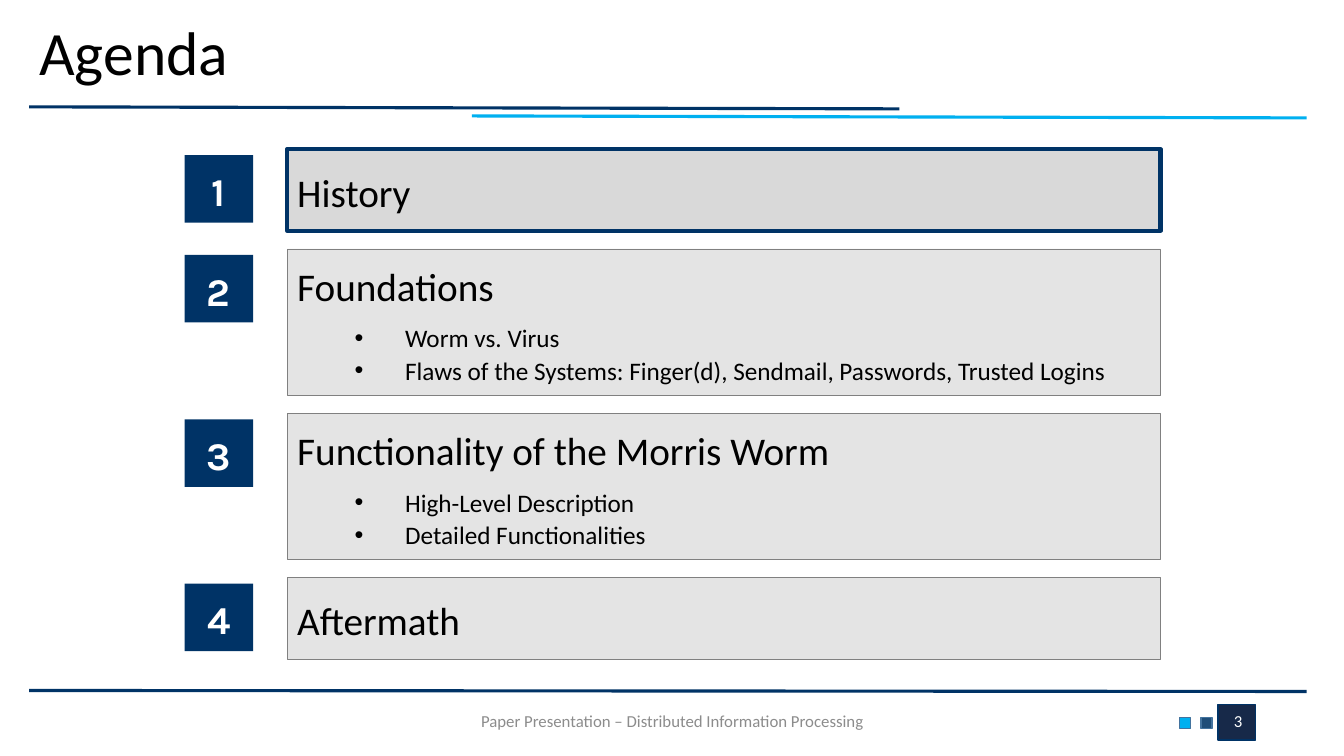
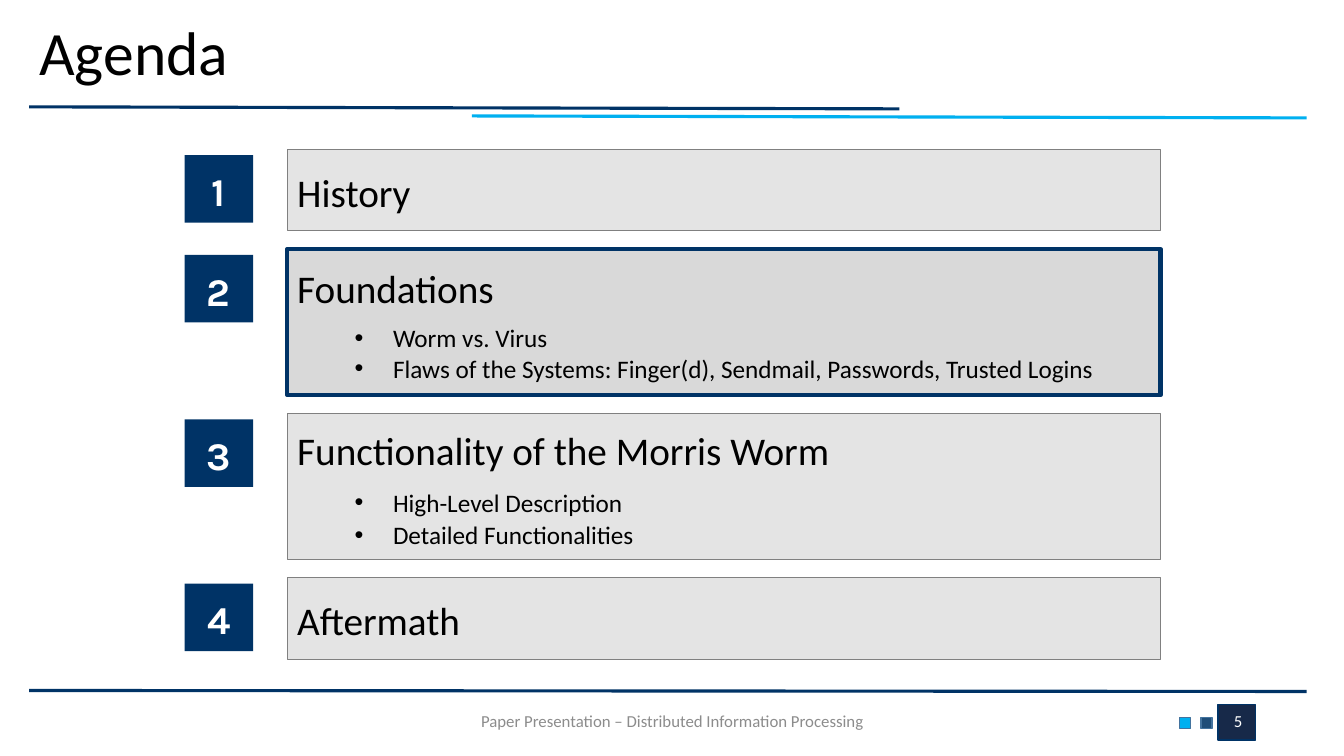
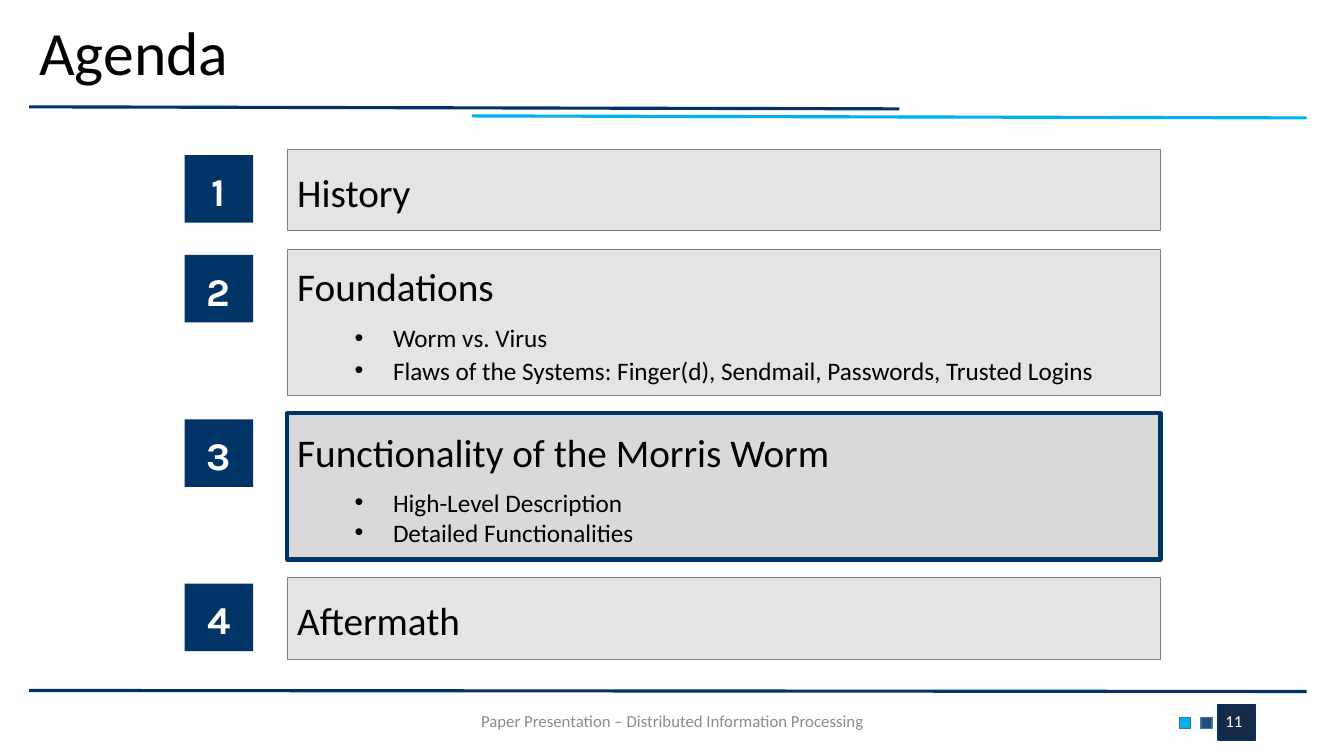
"""Build three agenda slides, each with a different section highlighted."""
from dataclasses import dataclass

from lxml.etree import SubElement
from pptx import Presentation
from pptx.dml.color import RGBColor
from pptx.enum.shapes import MSO_CONNECTOR, MSO_SHAPE
from pptx.enum.text import MSO_ANCHOR, MSO_AUTO_SIZE, PP_ALIGN
from pptx.oxml.ns import qn
from pptx.shapes.autoshape import Shape
from pptx.slide import Slide
from pptx.text.text import TextFrame
from pptx.util import Inches, Pt

NAVY = RGBColor(0x00, 0x33, 0x66)
DARK_NAVY = RGBColor(0x17, 0x29, 0x49)
STEEL = RGBColor(0x1F, 0x4E, 0x79)
STEEL_EDGE = RGBColor(0x43, 0x73, 0x9E)
CYAN = RGBColor(0x00, 0xB0, 0xF0)
PANEL_GRAY = RGBColor(0xD9, 0xD9, 0xD9)
EDGE_GRAY = RGBColor(0x80, 0x80, 0x80)
FOOTER_GRAY = RGBColor(0x8C, 0x8C, 0x8C)
BLACK = RGBColor(0x00, 0x00, 0x00)
WHITE = RGBColor(0xFF, 0xFF, 0xFF)

TITLE_ONLY = 5
LINE_SPACING = 1.07
SECTION_TOP = 1.48
SECTION_GAP = 0.18
PLAIN_HEIGHT = 0.81
DETAILED_HEIGHT = 1.45
BULLET_LEFT = 0.57
FOOTER = "Paper Presentation – Distributed Information Processing"


@dataclass(frozen=True)
class Rule:
    """A coloured line that spans part of the slide."""

    start: tuple[float, float]
    end: tuple[float, float]
    color: RGBColor


@dataclass(frozen=True)
class Block:
    """A filled rectangle beside the page number."""

    box: tuple[float, float, float, float]
    fill: RGBColor
    edge: RGBColor


@dataclass(frozen=True)
class Section:
    """An agenda entry with optional subtopics."""

    heading: str
    topics: tuple[str, ...] = ()


@dataclass(frozen=True)
class AgendaPage:
    """The page number, highlighted section and bullet gap of one slide."""

    number: int
    current: int
    bullet_gap: float


RULES = (
    Rule((0.29, 1.06), (8.92, 1.08), NAVY),
    Rule((0.29, 6.85), (12.96, 6.86), NAVY),
    Rule((4.68, 1.15), (12.96, 1.17), CYAN),
)
BLOCKS = (
    Block((12.08, 6.99, 0.37, 0.35), DARK_NAVY, NAVY),
    Block((11.91, 7.12, 0.11, 0.11), STEEL, STEEL_EDGE),
    Block((11.7, 7.12, 0.11, 0.11), CYAN, STEEL_EDGE),
)
SECTIONS = (
    Section("History"),
    Section("Foundations", (
        "Worm vs. Virus",
        "Flaws of the Systems: Finger(d), Sendmail, Passwords, Trusted Logins",
    )),
    Section("Functionality of the Morris Worm", (
        "High-Level Description",
        "Detailed Functionalities",
    )),
    Section("Aftermath"),
)
PAGES = (AgendaPage(3, 1, 0.5), AgendaPage(5, 2, 0.38), AgendaPage(11, 3, 0.38))


def write_text(
    text_frame: TextFrame,
    text: str,
    *,
    size: float,
    color: RGBColor = BLACK,
    font: str = "Calibri",
    bold: bool = False,
    align: PP_ALIGN = PP_ALIGN.LEFT,
    line_spacing: float = 1.0,
    space_after: float = 0,
    bullet_gap: float = 0,
) -> None:
    """Append a formatted paragraph, bulleted when a bullet gap is given."""
    text_frame.word_wrap = True
    text_frame.auto_size = MSO_AUTO_SIZE.NONE
    text_frame.vertical_anchor = MSO_ANCHOR.MIDDLE
    paragraph = text_frame.paragraphs[0]
    if paragraph.text:
        paragraph = text_frame.add_paragraph()
    paragraph.text = text
    paragraph.alignment = align
    paragraph.line_spacing = line_spacing
    paragraph.space_before = Pt(0)
    paragraph.space_after = Pt(space_after)
    if bullet_gap:
        paragraph.level = 1
        properties = paragraph._p.get_or_add_pPr()
        properties.set("marL", str(Inches(BULLET_LEFT + bullet_gap)))
        properties.set("indent", str(-Inches(bullet_gap)))
        SubElement(properties, qn("a:buFont"), typeface="Arial")
        SubElement(properties, qn("a:buChar"), char="•")
    run_font = paragraph.runs[0].font
    run_font.name = font
    run_font.size = Pt(size)
    run_font.bold = bold
    run_font.color.rgb = color


def add_rectangle(
    slide: Slide,
    box: tuple[float, float, float, float],
    fill: RGBColor,
    edge: RGBColor | None = None,
    edge_width: float = 1,
    opacity: int = 100,
) -> Shape:
    """Add a flat rectangle with an optional edge and transparency."""
    shape = slide.shapes.add_shape(MSO_SHAPE.RECTANGLE, *map(Inches, box))
    shape.shadow.inherit = False
    shape.fill.solid()
    shape.fill.fore_color.rgb = fill
    if opacity < 100:
        fill_color = shape._element.spPr.find(qn("a:solidFill"))[0]
        SubElement(fill_color, qn("a:alpha"), val=str(opacity * 1000))
    if edge is None:
        shape.line.fill.background()
    else:
        shape.line.color.rgb = edge
        shape.line.width = Pt(edge_width)
    return shape


def add_rule(slide: Slide, rule: Rule) -> None:
    """Add one of the lines that frame the content."""
    connector = slide.shapes.add_connector(
        MSO_CONNECTOR.STRAIGHT, *map(Inches, rule.start + rule.end)
    )
    connector.line.color.rgb = rule.color
    connector.line.width = Pt(2.25)
    SubElement(connector._element.spPr, qn("a:effectLst"))


def add_frame(slide: Slide, title: str, number: int) -> None:
    """Add the title, lines, footer and page number shared by all slides."""
    for rule in RULES:
        add_rule(slide, rule)
    for block in BLOCKS:
        add_rectangle(slide, block.box, block.fill, block.edge)
    heading = slide.shapes.title
    heading.left, heading.top = Inches(0.29), Inches(0.09)
    heading.width, heading.height = Inches(12.67), Inches(0.93)
    write_text(heading.text_frame, title, size=44, line_spacing=0.9)
    for left, width, text, color, align in (
        (9.42, 3, str(number), WHITE, PP_ALIGN.RIGHT),
        (4.42, 4.5, FOOTER, FOOTER_GRAY, PP_ALIGN.CENTER),
    ):
        text_box = slide.shapes.add_textbox(
            Inches(left), Inches(6.95), Inches(width), Inches(0.4)
        )
        write_text(text_box.text_frame, text, size=12, color=color, align=align)


def add_section(
    slide: Slide,
    section: Section,
    position: int,
    top: float,
    height: float,
    page: AgendaPage,
) -> None:
    """Add a numbered agenda panel, highlighted when it is current."""
    badge = add_rectangle(slide, (1.83, top + 0.06, 0.68, 0.67), NAVY)
    write_text(
        badge.text_frame, str(position), size=28, color=WHITE, font="Karla",
        bold=True, align=PP_ALIGN.CENTER, line_spacing=LINE_SPACING, space_after=8,
    )
    current = position == page.current
    edge, edge_width, opacity = (NAVY, 3, 100) if current else (EDGE_GRAY, 0.5, 70)
    panel = add_rectangle(
        slide, (2.85, top, 8.66, height), PANEL_GRAY, edge, edge_width, opacity
    )
    write_text(
        panel.text_frame, section.heading, size=28,
        line_spacing=LINE_SPACING, space_after=8,
    )
    compact = current and position > 1
    for topic in section.topics:
        write_text(
            panel.text_frame, topic, size=18, bullet_gap=page.bullet_gap,
            line_spacing=1.0 if compact else LINE_SPACING,
        )


def add_agenda(slide: Slide, page: AgendaPage) -> None:
    """Fill a slide with the frame and the stacked agenda sections."""
    add_frame(slide, "Agenda", page.number)
    top = SECTION_TOP
    for position, section in enumerate(SECTIONS, start=1):
        height = DETAILED_HEIGHT if section.topics else PLAIN_HEIGHT
        add_section(slide, section, position, top, height, page)
        top += height + SECTION_GAP


def main() -> None:
    """Create and save the presentation."""
    presentation = Presentation()
    presentation.slide_width = Inches(13.33)
    presentation.slide_height = Inches(7.5)
    layout = presentation.slide_layouts[TITLE_ONLY]
    for page in PAGES:
        add_agenda(presentation.slides.add_slide(layout), page)
    presentation.save("out.pptx")


if __name__ == "__main__":
    main()
